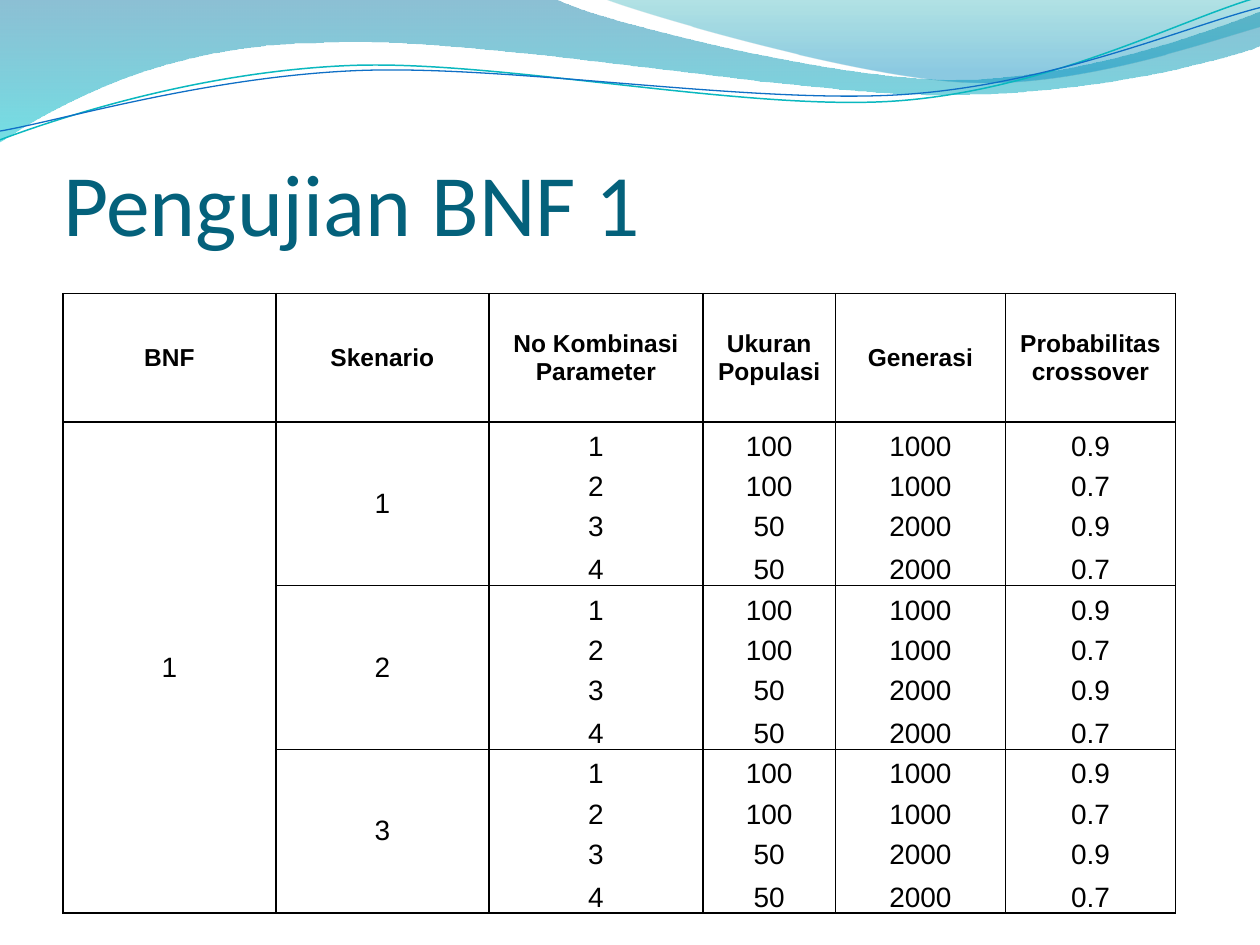
from dataclasses import dataclass
from math import cos, radians, sin

from lxml import etree
from pptx import Presentation
from pptx.dml.color import RGBColor
from pptx.enum.text import MSO_ANCHOR, MSO_AUTO_SIZE, PP_ALIGN
from pptx.oxml.ns import qn
from pptx.util import Inches, Pt

MID, LOW = MSO_ANCHOR.MIDDLE, MSO_ANCHOR.BOTTOM
LEFT, CENTER = PP_ALIGN.LEFT, PP_ALIGN.CENTER
FIT_NONE = MSO_AUTO_SIZE.NONE


@dataclass(frozen=True)
class Theme:
    title: str = "04617B"
    ink: str = "000000"
    teal: str = "0AB8BF"
    blue: str = "0F6FC6"
    band: tuple = ((0, "0074A1", 45), (1, "00C6CF", 55))
    crest: tuple = ((0, "00A1A9", 30), (0.8, "008BBF", 45))
    head_font: str = "Calibri"
    body_font: str = "Arial"
    title_size: int = 50
    head_size: int = 14
    cell_size: int = 16
    rule: int = 1


THEME = Theme()
TILT = -2.7

# Each path is a start point, then lines (2 numbers) or cubic curves (6).
BAND = [
    (0, -0.01), (4.4, -0.01),
    (4.76, 0.17, 6.64, 0.63, 7.58, 0.63), (8.53, 0.63, 9.58, 0.26, 10, 0.09),
    (10.01, 0.36),
    (9.83, 0.44, 8.7, 0.76, 7.46, 0.75), (6.22, 0.75, 3.82, 0.28, 2.57, 0.34),
    (1.29, 0.35, 0.46, 0.83, -0.01, 1.13), (0, -0.01),
]
CREST = [
    (4.79, -0.01),
    (5.09, 0.11, 6.82, 0.62, 7.69, 0.65), (8.56, 0.69, 9.61, 0.32, 10, 0.21),
    (10, 0), (4.79, -0.01),
]
TEAL_WAVE = [
    (0, 1.11),
    (0.48, 0.93, 1.58, 0.57, 2.77, 0.52), (3.95, 0.47, 5.93, 0.89, 7.13, 0.8),
    (8.33, 0.71, 9.38, 0.15, 9.98, -0.02),
]
BLUE_WAVE = [
    (0, 1.04),
    (0.47, 0.96, 1.64, 0.61, 2.83, 0.56), (4.03, 0.51, 5.97, 0.83, 7.17, 0.75),
    (8.36, 0.67, 9.41, 0.21, 10, 0.06),
]

HEADS = ["BNF", "Skenario", "No Kombinasi Parameter", "Ukuran Populasi",
         "Generasi", "Probabilitas crossover"]
TESTS = [("1", "100", "1000", "0.9"), ("2", "100", "1000", "0.7"),
         ("3", "50", "2000", "0.9"), ("4", "50", "2000", "0.7")]
GROUPS = 3
COLS = [1.69, 1.69, 1.7, 1.05, 1.35, 1.35]
ROWS = [1.02] + [0.32, 0.32, 0.32, 0.34] * GROUPS


def rgb(code):
    return RGBColor.from_string(code)


def pairs(part):
    return list(zip(part[::2], part[1::2]))


def turn(part, pivot, angle):
    """Rotate the points of one path part clockwise about a pivot."""
    px, py = pivot
    c, s = cos(radians(angle)), sin(radians(angle))
    return tuple(value for x, y in pairs(part)
                 for value in (px + (x - px) * c - (y - py) * s,
                               py + (x - px) * s + (y - py) * c))


def add_path(shapes, path, close):
    """Draw a freeform, joining each three points of a curve into one node."""
    points = [(Inches(x), Inches(y)) for part in path for x, y in pairs(part)]
    pen = shapes.build_freeform(*points[0])
    pen.add_line_segments(points[1:], close=close)
    shape = pen.convert_to_shape()
    shape.shadow.inherit = False
    nodes = iter(list(shape.element.iter(qn("a:lnTo"))))
    for part in path[1:]:
        node = next(nodes)
        if len(part) == 6:
            curve = etree.Element(qn("a:cubicBezTo"))
            node.addprevious(curve)
            for step in (node, next(nodes), next(nodes)):
                curve.append(step[0])
                step.getparent().remove(step)
    return shape


def add_band(shapes, path, stops):
    shape = add_path(shapes, path, True)
    shape.line.fill.background()
    shape.fill.gradient()
    shape.fill.gradient_angle = 270
    for stop, (place, code, _) in zip(shape.fill.gradient_stops, stops):
        stop.position = place
        stop.color.rgb = rgb(code)
    tints = shape.element.spPr.iter(qn("a:srgbClr"))
    for tint, (_, _, share) in zip(tints, stops):
        etree.SubElement(tint, qn("a:alpha"), val=str(share * 1000))


def add_wave(shapes, path, pivot, code, width):
    level = [turn(part, pivot, -TILT) for part in path]
    shape = add_path(shapes, level, False)
    shape.rotation = TILT
    shape.fill.background()
    shape.line.color.rgb = rgb(code)
    shape.line.width = Pt(width)


def style(para, font, size, code, align, bold=False):
    para.alignment = align
    para.font.name = font
    para.font.size = Pt(size)
    para.font.bold = bold
    para.font.color.rgb = rgb(code)


def set_title(slide, text):
    title = slide.shapes.title
    title.left, title.top = Inches(0.5), Inches(0.77)
    title.width, title.height = Inches(9.08), Inches(1.25)
    frame = title.text_frame
    frame.text = text
    frame.auto_size = FIT_NONE
    frame.vertical_anchor = LOW
    frame.margin_left = frame.margin_right = frame.margin_bottom = 0
    frame.margin_top = Inches(0.05)
    style(frame.paragraphs[0], THEME.head_font, THEME.title_size, THEME.title, LEFT)


def set_edges(cell, top, bottom):
    """Rule both sides of a cell, and its top and bottom where asked."""
    props = cell._tc.get_or_add_tcPr()
    edges = {"a:lnL": True, "a:lnR": True, "a:lnT": top, "a:lnB": bottom}
    for i, (tag, shown) in enumerate(edges.items()):
        line = etree.Element(qn(tag), w=str(Pt(THEME.rule)))
        fill = etree.SubElement(line, qn("a:solidFill" if shown else "a:noFill"))
        if shown:
            etree.SubElement(fill, qn("a:srgbClr"), val=THEME.ink)
        props.insert(i, line)


def set_cell(cell, text, head, anchor):
    cell.vertical_anchor = anchor
    cell.margin_left = cell.margin_right = Inches(0.07)
    cell.margin_top = cell.margin_bottom = 0
    cell.fill.background()
    if text:
        cell.text = text
        size = THEME.head_size if head else THEME.cell_size
        style(cell.text_frame.paragraphs[0], THEME.body_font, size, THEME.ink,
              CENTER, head)


def add_grid(slide):
    count, last = len(TESTS), len(ROWS) - 1
    data = [HEADS]
    for group in range(GROUPS):
        for i, test in enumerate(TESTS):
            bnf = "1" if group == i == 0 else ""
            data.append([bnf, "" if i else str(group + 1), *test])
    table = slide.shapes.add_table(
        len(ROWS), len(COLS), Inches(0.5), Inches(2.33),
        Inches(sum(COLS)), Inches(sum(ROWS))).table
    table.first_row = table.horz_banding = False
    for col, width in zip(table.columns, COLS):
        col.width = Inches(width)
    for r, height in enumerate(ROWS):
        table.rows[r].height = Inches(height)
        for c, text in enumerate(data[r]):
            cell = table.cell(r, c)
            set_cell(cell, text, r == 0, MID if r == 0 or c < 2 else LOW)
            top = r < 2 or (c > 0 and r % count == 1)
            end = r in (0, last) or (c > 0 and r % count == 0)
            set_edges(cell, top, end or (c < 2 and top))
    table.cell(1, 0).merge(table.cell(last, 0))
    for r in range(1, last, count):
        table.cell(r, 1).merge(table.cell(r + count - 1, 1))


def main():
    deck = Presentation()
    deck.slide_width, deck.slide_height = Inches(10), Inches(7.5)
    slide = deck.slides.add_slide(deck.slide_layouts[5])
    add_band(slide.shapes, BAND, THEME.band)
    add_band(slide.shapes, CREST, THEME.crest)
    waves = slide.shapes.add_group_shape().shapes
    add_wave(waves, TEAL_WAVE, (4.99, 0.58), THEME.teal, 0.85)
    add_wave(waves, BLUE_WAVE, (4.99, 0.59), THEME.blue, 0.75)
    add_grid(slide)
    set_title(slide, "Pengujian BNF 1")
    deck.save("out.pptx")


if __name__ == "__main__":
    main()
